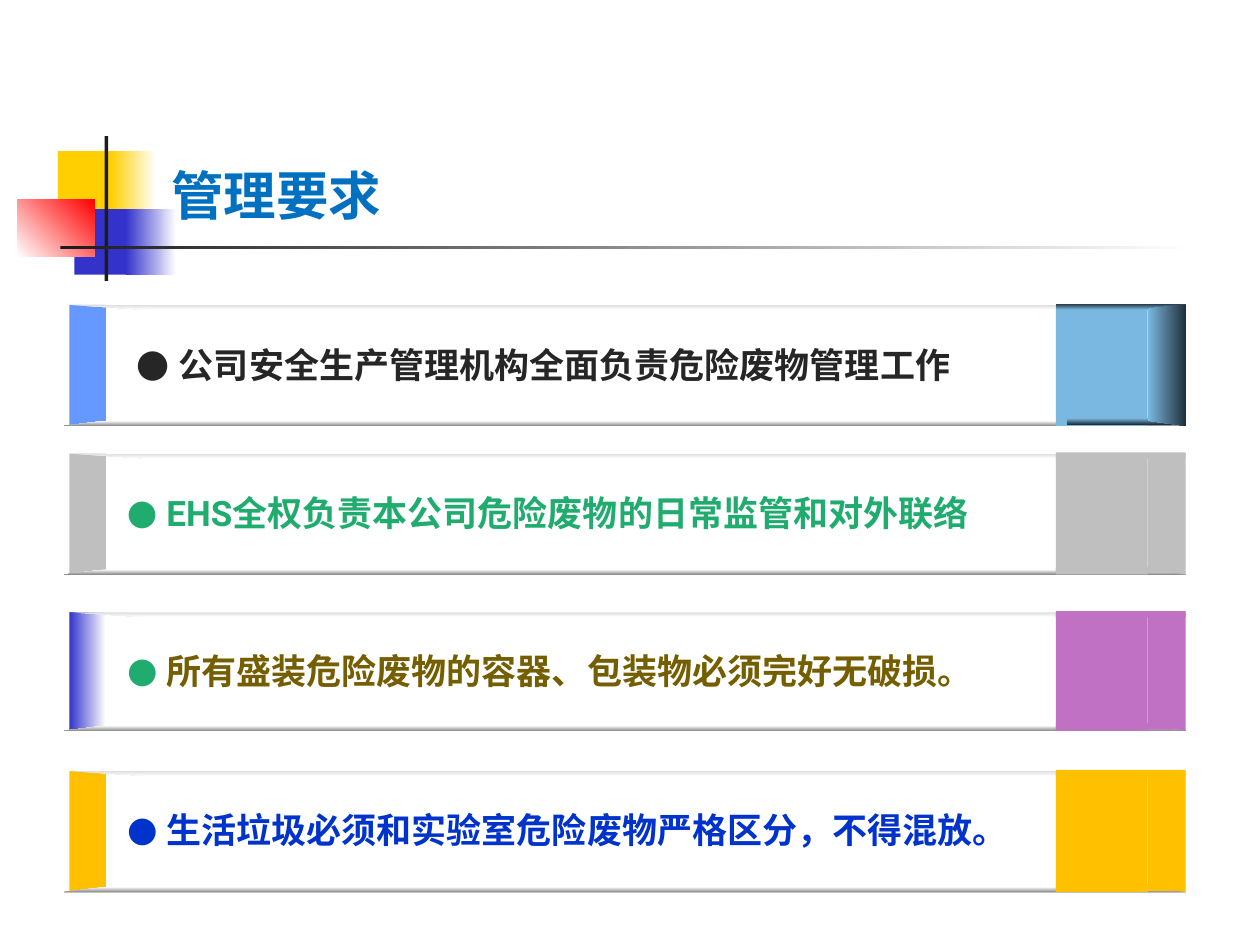
"""Build the slide of management requirements for hazardous waste."""
from lxml.etree import SubElement
from pptx import Presentation
from pptx.dml.color import RGBColor as RGB
from pptx.enum.shapes import MSO_SHAPE as Kind
from pptx.enum.text import MSO_ANCHOR as Anchor
from pptx.oxml.ns import qn
from pptx.util import Pt

PX = 9144
FONT = "Roboto"
HUES = {
    "white": "FFFFFF", "ink": "1C1C1C", "gold": "FFCF01", "navy": "3333CC",
    "red": "FF0000", "title": "0070C0", "pale": "DDDDDD", "shade": "8E8E8E",
    "blue": "6699FF", "sky": "7BB8E1", "night": "20303B", "gray": "BFBFBF",
    "plum": "C171C3", "amber": "FFC000", "coal": "262626", "green": "20AC6F",
    "olive": "745E00", "royal": "0033CC",
}

deck = Presentation()
deck.slide_width, deck.slide_height = 1000 * PX, 750 * PX
slide = deck.slides.add_slide(deck.slide_layouts[6])
shapes = slide.shapes


def form(tones, box=None, pts=None, turn=0):
    if box:
        item = shapes.add_shape(Kind.RECTANGLE, *(n * PX for n in box))
    else:
        pen = shapes.build_freeform(*pts[0], scale=PX)
        item = pen.add_line_segments(pts[1:], close=True).convert_to_shape()
    item.shadow.inherit = False
    item.line.fill.background()
    if len(tones) == 1:
        item.fill.solid()
        item.fill.fore_color.rgb = RGB.from_string(HUES[tones[0]])
    else:
        item.fill.gradient()
        item.fill.gradient_angle = turn
        for stop, tone in zip(item.fill.gradient_stops, tones):
            stop.color.rgb = RGB.from_string(HUES[tone])


def text(runs, box, anchor=Anchor.MIDDLE, dot=None):
    frame = shapes.add_textbox(*(n * PX for n in box)).text_frame
    frame.word_wrap = True
    frame.vertical_anchor = anchor
    para = frame.paragraphs[0]
    if dot:
        props = para._p.get_or_add_pPr()
        props.set("marL", "0")
        props.set("indent", "0")
        SubElement(props, qn("a:buFont"), typeface=FONT)
        SubElement(props, qn("a:buChar"), char=dot)
    for words, size, tone in runs:
        run = para.add_run()
        run.text = words
        run.font.size = Pt(size)
        run.font.bold = True
        run.font.name = FONT
        run.font.color.rgb = RGB.from_string(HUES[tone])
        SubElement(run._r.get_or_add_rPr(), qn("a:ea"), typeface=FONT)


form(["gold"], (46, 120, 48, 52))
form(["gold", "white"], (88, 120, 36, 52))
form(["navy"], (59, 166, 46, 52))
form(["navy", "white"], (100, 166, 40, 52))
form(["white", "red"], (14, 158, 61, 46), turn=45)
form(["ink"], (83, 108, 3, 115))
form(["ink", "white"], (48, 195, 900, 3))
text([("管理要求", 30, "title")], (126, 92, 839, 92), anchor=Anchor.BOTTOM)

rows = [
    (242, 96, ["blue"], "sky", "night", 98, 740,
     [(" ", 22, "coal"), ("公司安全生产管理机构全面负责危险废物管理工作", 20, "coal")]),
    (360, 96, ["gray"], "gray", None, 91, 740,
     [(" EHS全权负责本公司危险废物的日常监管和对外联络", 20, "green")]),
    (486, 94, ["navy", "white"], "plum", None, 91, 748,
     [(" ", 20, "green"), ("所有盛装危险废物的容器、包装物必须完好无破损。", 20, "olive")]),
    (612, 96, ["amber"], "amber", None, 91, 748,
     [(" 生活垃圾必须和实验室危险废物严格区分，不得混放。", 20, "royal")]),
]

for top, high, left, tone, dark, x, wide, runs in rows:
    end = top + high
    form(["white"], (51, top, 875, high - 2))
    form(left, (55, top, 29, high))
    form(["pale", "white"], turn=270,
         pts=[(56, top), (117, top + 4), (875, top + 4), (936, top)])
    form(["white", "shade"], turn=270,
         pts=[(51, end), (83, end - 4), (910, end - 4), (941, end)])
    form([tone], (838, top, 73, high))
    fade = [tone, dark] if dark else [tone]
    start = 847 if dark else 838
    form(fade[::-1], (838, top - 1, 103, 5), turn=270)
    form(fade, (start, end - 6, 932 - start, 5), turn=270)
    form(fade, pts=[(941, end), (911, end - 4), (911, top + 3), (941, top)])
    text(runs, (x, top + 15, wide, 63), dot="●")

deck.save("out.pptx")
